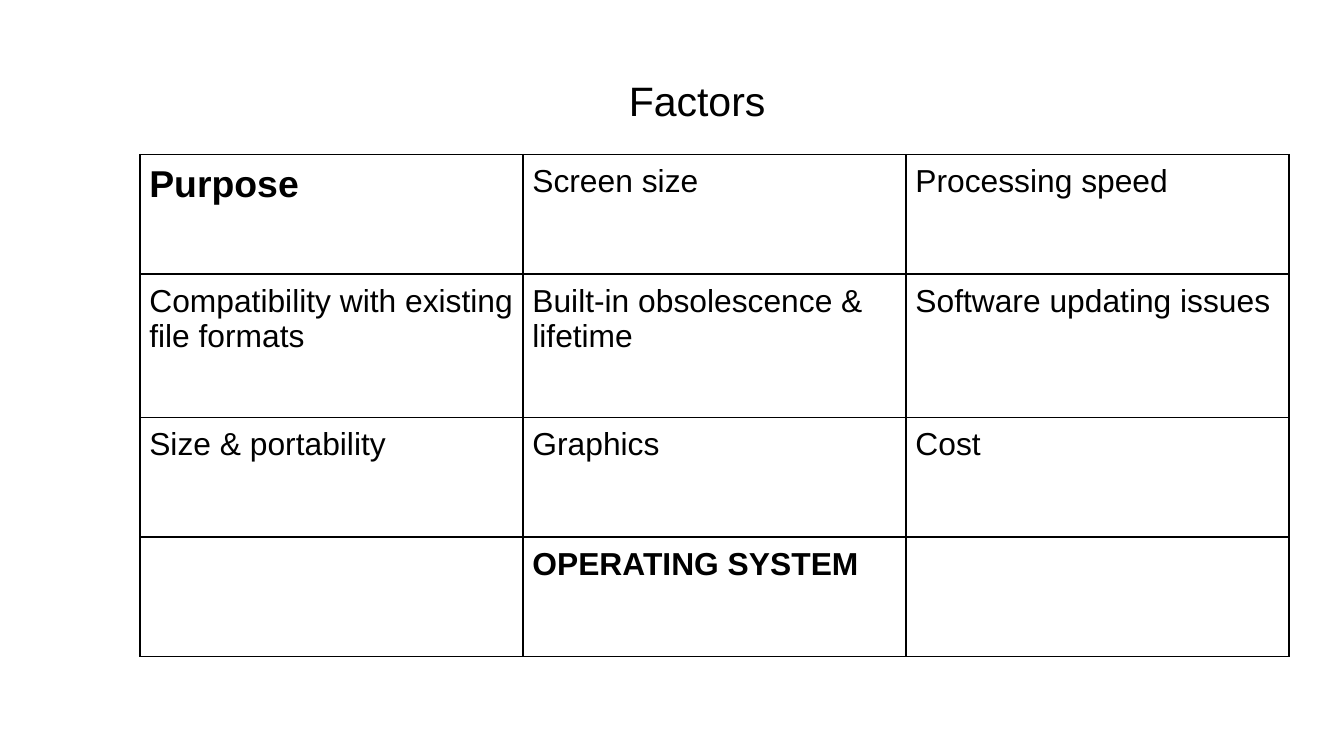
import pptx
import pptx.dml.color
import pptx.enum.text
import pptx.oxml
import pptx.oxml.ns
import pptx.util

Pt = pptx.util.Pt

TITLE = "Factors"
FACTORS = [
    ["Purpose", "Screen size", "Processing speed"],
    ["Compatibility with existing file formats",
     "Built-in obsolescence & lifetime", "Software updating issues"],
    ["Size & portability", "Graphics", "Cost"],
    ["", "OPERATING SYSTEM", ""],
]
BOLD_SIZES = {"Purpose": 20, "OPERATING SYSTEM": 17}
TEXT_SIZE = 17
COLORS = {"ink": "000000"}
FONT = "Arial"
LEFT, TOP, COL_WIDTH = 75, 82.8, 205.2
ROW_HEIGHTS = [64, 77, 64, 64]


def add_run(p, text, size, bold=False):
    r = p.add_run()
    r.text = text
    r.font.name = FONT
    r.font.size = Pt(size)
    r.font.bold = bold
    r.font.color.rgb = pptx.dml.color.RGBColor.from_string(COLORS["ink"])


def add_borders(cell):
    tc_pr = cell._tc.get_or_add_tcPr()
    for i, side in enumerate(("lnL", "lnR", "lnT", "lnB")):
        # Border lines must precede the cell's fill.
        tc_pr.insert(i, pptx.oxml.parse_xml(
            f'<a:{side} {pptx.oxml.ns.nsdecls("a")} w="{Pt(1)}"><a:solidFill>'
            f'<a:srgbClr val="{COLORS["ink"]}"/></a:solidFill></a:{side}>'))


def add_title(s):
    sp = s.shapes.title
    sp.left, sp.top, sp.width, sp.height = Pt(142), Pt(33), Pt(463), Pt(41)
    tf = sp.text_frame
    tf.margin_left = tf.margin_right = tf.margin_top = tf.margin_bottom = Pt(7.2)
    tf.vertical_anchor = pptx.enum.text.MSO_ANCHOR.BOTTOM
    p = tf.paragraphs[0]
    p.alignment = pptx.enum.text.PP_ALIGN.CENTER
    add_run(p, TITLE, 22)


def add_factor_table(s):
    n_cols = len(FACTORS[0])
    table = s.shapes.add_table(
        len(FACTORS), n_cols, Pt(LEFT), Pt(TOP),
        Pt(n_cols * COL_WIDTH), Pt(sum(ROW_HEIGHTS))).table
    table.first_row = table.horz_banding = False
    for col in table.columns:
        col.width = Pt(COL_WIDTH)
    for row, height, texts in zip(table.rows, ROW_HEIGHTS, FACTORS):
        row.height = Pt(height)
        for cell, text in zip(row.cells, texts):
            cell.fill.background()
            cell.margin_left = cell.margin_right = Pt(5)
            cell.margin_top = cell.margin_bottom = Pt(5)
            add_borders(cell)
            if text:
                add_run(cell.text_frame.paragraphs[0], text,
                        BOLD_SIZES.get(text, TEXT_SIZE), text in BOLD_SIZES)


prs = pptx.Presentation()
prs.slide_width, prs.slide_height = Pt(720), Pt(405)
s = prs.slides.add_slide(prs.slide_layouts.get_by_name("Title Only"))
add_factor_table(s)
add_title(s)
prs.save("out.pptx")
